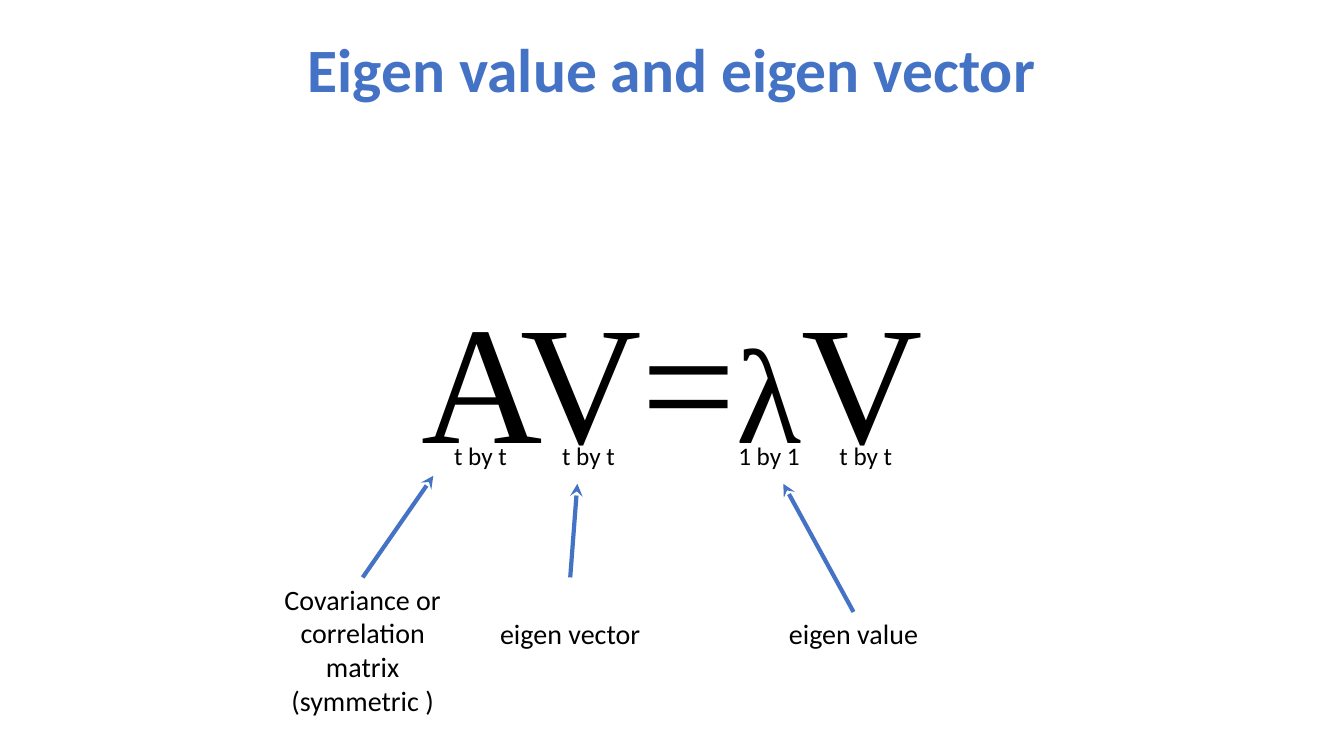
from lxml import etree
from pptx import Presentation
from pptx import util as u
from pptx.dml import color
from pptx.enum import shapes, text
from pptx.oxml import ns

HUES = {"blue": "4472C4", "ink": "000000"}
SANS, SERIF = "Calibri", "Times New Roman"


def rgb(name):
    """Look up a named colour."""
    return color.RGBColor.from_string(HUES[name])


def write(par, words, size=20, font=SANS, hue="ink", bold=False):
    """Add one formatted run to a centred paragraph."""
    par.alignment = text.PP_ALIGN.CENTER
    run = par.add_run()
    run.text = words
    run.font.size = u.Pt(size)
    run.font.name = font
    run.font.bold = bold
    run.font.color.rgb = rgb(hue)


def box(slide, x, y, w, h):
    """Add a wrapping text box and return its first paragraph."""
    frame = slide.shapes.add_textbox(u.Cm(x), u.Cm(y), u.Cm(w), u.Cm(h)).text_frame
    frame.word_wrap = True
    return frame.paragraphs[0]


def head(slide, x, y, w, h):
    """Place and fill the title."""
    title = slide.shapes.title
    title.left, title.top, title.width, title.height = map(u.Cm, (x, y, w, h))
    frame = title.text_frame
    frame.vertical_anchor = text.MSO_ANCHOR.MIDDLE
    frame.auto_size = text.MSO_AUTO_SIZE.NONE
    par = frame.paragraphs[0]
    par.line_spacing = 0.9
    write(par, "Eigen value and eigen vector", size=44, hue="blue", bold=True)


def formula(slide, x, y, w, h):
    """Set the equation with the size of each term beneath it."""
    par = box(slide, x, y, w, h)
    for words, size in (("AV=", 120), ("λ", 96), ("V", 120)):
        write(par, words, size=size, font=SERIF)
    terms = ((1.37, "t by t"), (4.09, "t by t"), (8.64, "1 by 1"), (11.08, "t by t"))
    for dx, words in terms:
        write(box(slide, x + dx, y + 4.16, 2.18, 1.02), words, size=18)


def arrow(slide, start, tip):
    """Draw a blue arrow from start to tip."""
    line = slide.shapes.add_connector(
        shapes.MSO_CONNECTOR.STRAIGHT, *map(u.Cm, (*start, *tip)))
    line.line.color.rgb = rgb("blue")
    line.line.width = u.Pt(3)
    end = etree.SubElement(line.line._get_or_add_ln(), ns.qn("a:tailEnd"))
    end.set("type", "stealth")
    etree.SubElement(line._element.spPr, ns.qn("a:effectLst"))


def notes(slide, x, y, w):
    """Name the terms, with an arrow from each label's middle."""
    rows = (
        ("Covariance or correlation matrix (symmetric )", 0, 0, 3.68, 0, 4.14, -2.56),
        ("eigen vector", 5.23, 0.87, 1.12, 0, 7.77, -2.36),
        ("eigen value", 12.37, 0.87, 1.12, 0.87, 12.96, -2.36),
    )
    for words, dx, dy, h, base, tx, ty in rows:
        arrow(slide, (x + dx + w / 2, y + base), (x + tx, y + ty))
        write(box(slide, x + dx, y + dy, w, h), words)


def main():
    """Build and save the slide."""
    deck = Presentation()
    deck.slide_width, deck.slide_height = u.Cm(33.87), u.Cm(19.05)
    slide = deck.slides.add_slide(deck.slide_layouts[5])
    head(slide, 2.33, 0, 29.21, 3.68)
    formula(slide, 9.65, 6.81, 14.58, 5.38)
    notes(slide, 6.78, 14.55, 4.72)
    deck.save("out.pptx")


if __name__ == "__main__":
    main()
